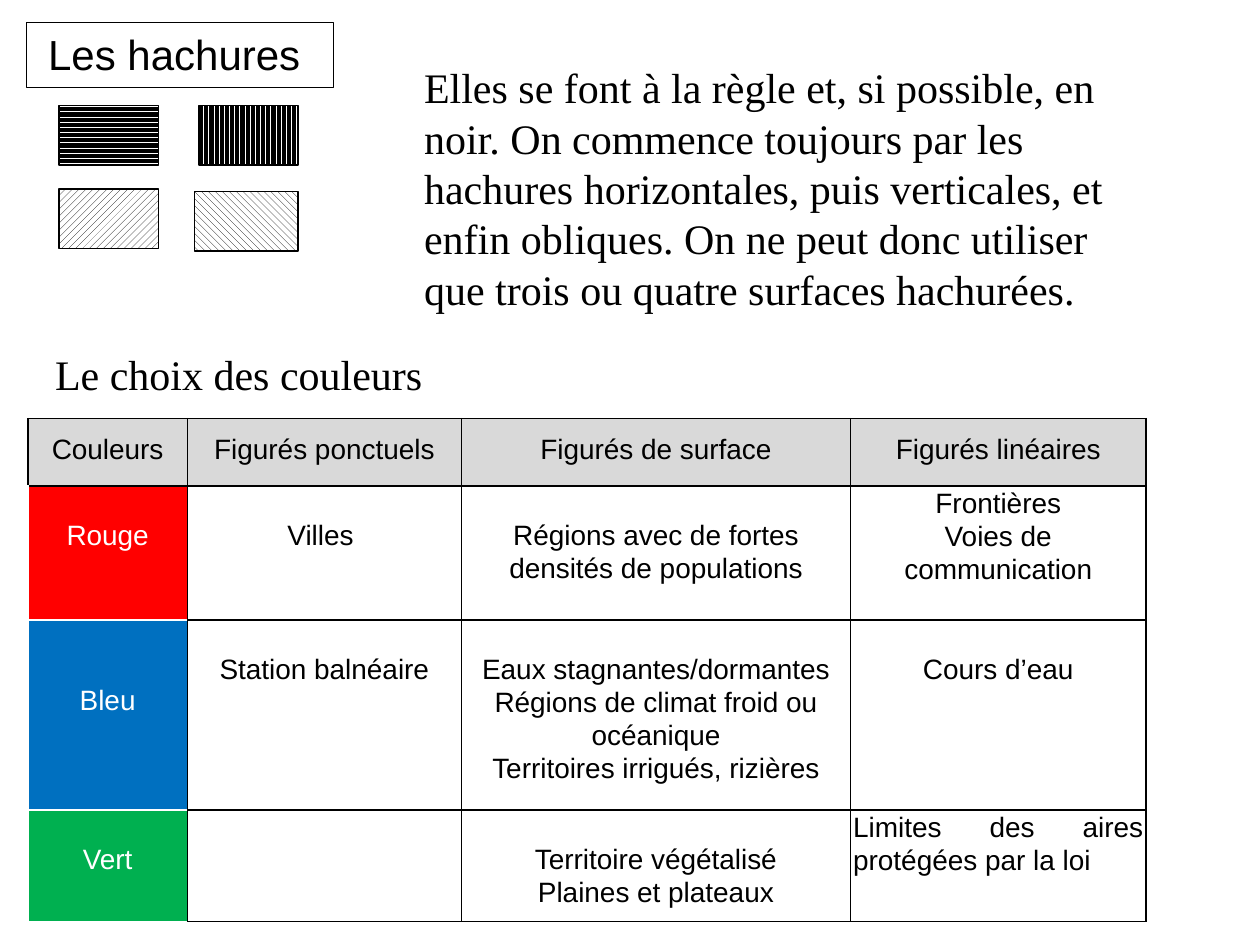
from lxml import etree
from pptx import Presentation
from pptx.dml.color import RGBColor
from pptx.enum import dml, shapes, text
from pptx.oxml import ns
from pptx.util import Cm, Pt

BLACK = RGBColor(0x00, 0x00, 0x00)
WHITE = RGBColor(0xFF, 0xFF, 0xFF)
GREY = RGBColor(0xD9, 0xD9, 0xD9)
RED = RGBColor(0xFF, 0x00, 0x00)
BLUE = RGBColor(0x00, 0x70, 0xC0)
GREEN = RGBColor(0x00, 0xB0, 0x50)

CENTER, JUSTIFY = text.PP_ALIGN.CENTER, text.PP_ALIGN.JUSTIFY
PATTERN = dml.MSO_PATTERN

# Content: boxes are (left, top, width, height) in cm
TITLE = ("Les hachures ", (0.53, 0.46, 6.2, 1.3))
NOTES = [
    ("Elles se font à la règle et, si possible, en noir. On commence toujours par les "
     "hachures horizontales, puis verticales, et enfin obliques. On ne peut donc utiliser "
     "que trois ou quatre surfaces hachurées.", (8.3, 1.12, 14.8, 5.38)),
    ("Le choix des couleurs", (0.86, 6.91, 8.2, 1.27)),
]
HATCHINGS = [
    (PATTERN.DARK_HORIZONTAL, (1.19, 2.13, 2.0, 1.2)),
    (PATTERN.DARK_VERTICAL, (4.01, 2.13, 2.0, 1.2)),
    (PATTERN.WIDE_UPWARD_DIAGONAL, (1.19, 3.81, 2.0, 1.2)),
    (PATTERN.WIDE_DOWNWARD_DIAGONAL, (3.92, 3.86, 2.09, 1.2)),
]

TABLE_LEFT, TABLE_TOP = 0.56, 8.44
COLUMN_WIDTHS = [3.22, 5.52, 7.85, 5.95]
ROW_HEIGHTS = [1.36, 2.7, 3.83, 2.25]
HEADINGS = ["Couleurs", "Figurés ponctuels", "Figurés de surface", "Figurés linéaires"]
# Each row: colour, then cells as (text, lines left free above, alignment)
ROWS = [
    (RED, [("Rouge", 1, CENTER), ("Villes ", 1, CENTER),
           ("Régions avec de fortes densités de populations", 1, CENTER),
           ("Frontières\nVoies de\ncommunication", 0, CENTER)]),
    (BLUE, [("Bleu", 2, CENTER), ("Station balnéaire", 1, CENTER),
            ("Eaux stagnantes/dormantes\nRégions de climat froid ou océanique\n"
             "Territoires irrigués, rizières", 1, CENTER),
            ("Cours d’eau", 1, CENTER)]),
    (GREEN, [("Vert", 1, CENTER), ("", 0, CENTER),
             ("Territoire végétalisé\nPlaines et plateaux", 1, CENTER),
             ("Limites des aires protégées par la loi", 0, JUSTIFY)]),
]
FREE_LINE = 0.64


def cm_box(box):
    return [Cm(length) for length in box]


def format_text(frame, font, size, color, alignment=None, spacing=None):
    for paragraph in frame.paragraphs:
        paragraph.alignment = alignment
        paragraph.line_spacing = spacing
        for run in paragraph.runs:
            run.font.name, run.font.size = font, Pt(size)
            run.font.color.rgb = color


def add_rectangle(box):
    shape = slide.shapes.add_shape(shapes.MSO_SHAPE.RECTANGLE, *cm_box(box))
    shape.shadow.inherit = False
    shape.line.color.rgb = BLACK
    shape.line.width = Pt(0.75)
    return shape


def set_borders(cell, colors):
    properties = cell._tc.get_or_add_tcPr()
    for index, (side, color) in enumerate(zip("LRTB", colors)):
        line = etree.Element(ns.qn(f"a:ln{side}"), w=str(Pt(1)))
        fill = etree.SubElement(line, ns.qn("a:solidFill"))
        etree.SubElement(fill, ns.qn("a:srgbClr"), val=str(color))
        properties.insert(index, line)


def fill_cell(cell, content, fill, color, free_lines, alignment, spacing):
    cell.text_frame.text = content
    cell.margin_left = cell.margin_right = Cm(0.05)
    cell.margin_top, cell.margin_bottom = Cm(free_lines * FREE_LINE), 0
    cell.fill.solid()
    cell.fill.fore_color.rgb = fill
    format_text(cell.text_frame, "Arial", 16, color, alignment, spacing)


presentation = Presentation()
presentation.slide_width, presentation.slide_height = Cm(25.4), Cm(19.05)
slide = presentation.slides.add_slide(presentation.slide_layouts[6])

# Paragraph and table heading
for content, box in NOTES:
    frame = slide.shapes.add_textbox(*cm_box(box)).text_frame
    frame.word_wrap = True
    frame.text = content
    format_text(frame, "Times New Roman", 24, BLACK)

# Framed title
title = add_rectangle(TITLE[1])
title.fill.background()
title.text_frame.text = TITLE[0]
title.text_frame.vertical_anchor = text.MSO_ANCHOR.TOP
format_text(title.text_frame, "Arial", 24, BLACK, CENTER)

# Hatching samples
for pattern, box in HATCHINGS:
    sample = add_rectangle(box)
    sample.fill.patterned()
    sample.fill.pattern = pattern
    sample.fill.fore_color.rgb = BLACK
    sample.fill.back_color.rgb = WHITE

# Colour table
table = slide.shapes.add_table(
    len(ROW_HEIGHTS), len(COLUMN_WIDTHS), Cm(TABLE_LEFT), Cm(TABLE_TOP),
    Cm(sum(COLUMN_WIDTHS)), Cm(sum(ROW_HEIGHTS))).table
table.first_row = table.horz_banding = False
for column, width in zip(table.columns, COLUMN_WIDTHS):
    column.width = Cm(width)
for row, height in zip(table.rows, ROW_HEIGHTS):
    row.height = Cm(height)

for cell, heading in zip(table.rows[0].cells, HEADINGS):
    fill_cell(cell, heading, GREY, BLACK, 0, CENTER, 1.5)
    set_borders(cell, [BLACK] * 4)

for row_index, (row_color, cells) in enumerate(ROWS, start=1):
    for column_index, (content, free_lines, alignment) in enumerate(cells):
        cell = table.cell(row_index, column_index)
        is_label = column_index == 0
        fill_cell(cell, content, row_color if is_label else WHITE,
                  WHITE if is_label else BLACK, free_lines, alignment, 1.07)
        top = WHITE if is_label and row_index > 1 else BLACK
        edge = WHITE if is_label else BLACK
        set_borders(cell, [edge, BLACK, top, edge])

presentation.save("out.pptx")
